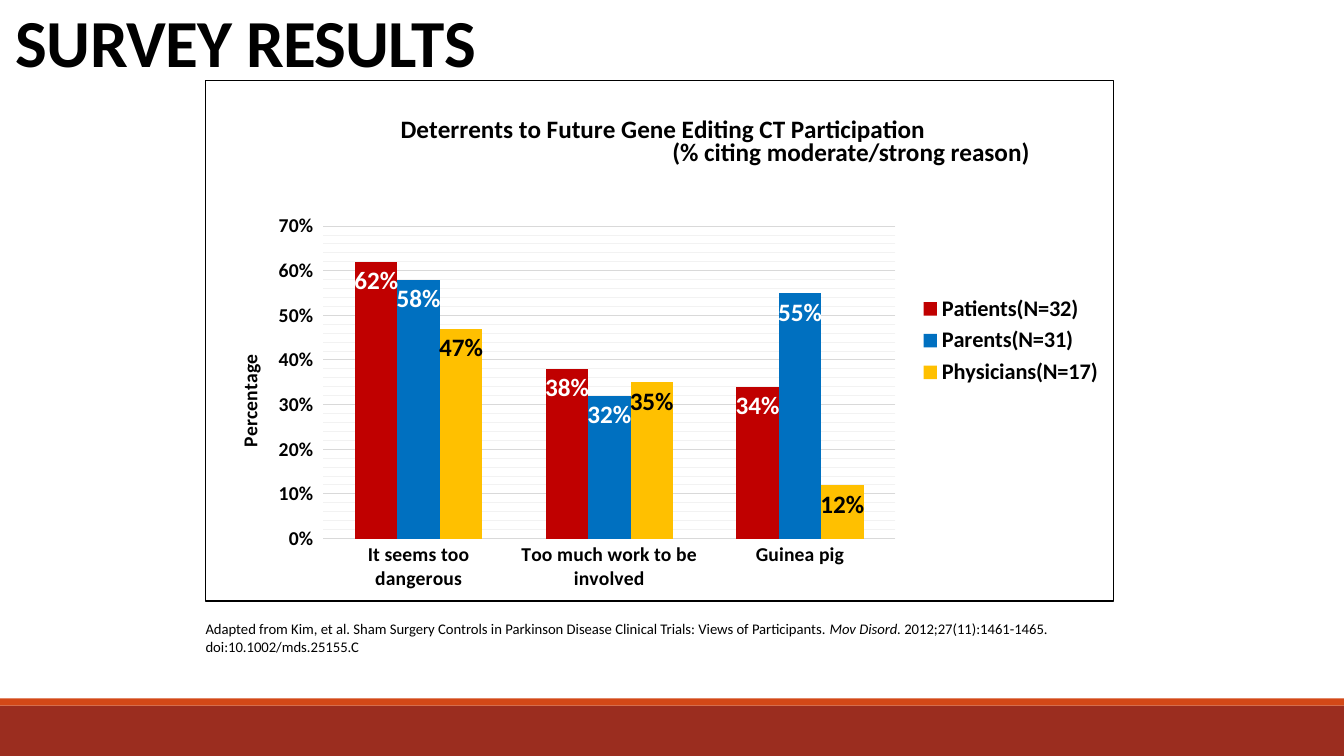
from dataclasses import dataclass

from lxml import etree
from pptx import Presentation, util as u
from pptx.chart.data import CategoryChartData
from pptx.dml.color import RGBColor
from pptx.enum import chart as kinds, shapes, text
from pptx.oxml import parse_xml
from pptx.oxml.ns import nsdecls, qn

BLACK = RGBColor(0, 0, 0)
WHITE = RGBColor(255, 255, 255)
BRICK = RGBColor(0x9B, 0x2D, 0x1F)
ORANGE = RGBColor(0xD3, 0x48, 0x17)
RED = RGBColor(0xC0, 0, 0)
BLUE = RGBColor(0, 0x70, 0xC0)
GOLD = RGBColor(0xFF, 0xC0, 0)
GRAY = RGBColor(0xD9, 0xD9, 0xD9)
PALE = RGBColor(0xF2, 0xF2, 0xF2)
FACE = "Calibri"


@dataclass
class Band:
    top: float
    height: float
    color: RGBColor


@dataclass
class Group:
    name: str
    values: tuple[float, ...]
    color: RGBColor
    label: RGBColor


BANDS = [Band(7, 0.5, BRICK), Band(6.93, 0.07, ORANGE)]
GROUPS = [
    Group("Patients(N=32)", (0.62, 0.38, 0.34), RED, WHITE),
    Group("Parents(N=31)", (0.58, 0.32, 0.55), BLUE, WHITE),
    Group("Physicians(N=17)", (0.47, 0.35, 0.12), GOLD, BLACK),
]
REASONS = ["It seems too dangerous", "Too much work to be involved", "Guinea pig"]


def style(font, size: float, bold: bool = True, color: RGBColor = BLACK,
          italic: bool = False) -> None:
    font.name = FACE
    font.size = u.Pt(size)
    font.bold = bold
    font.italic = italic
    font.color.rgb = color


def write(slide, box: tuple[float, ...], *parts: str, size: float, bold: bool = False,
          slant: str = "", line: float = 1, space: int = 0) -> None:
    frame = slide.shapes.add_textbox(*map(u.Inches, box)).text_frame
    frame.word_wrap = True
    frame.vertical_anchor = text.MSO_ANCHOR.TOP
    para = frame.paragraphs[0]
    para.line_spacing = line
    for part in parts:
        run = para.add_run()
        run.text = part
        style(run.font, size, bold, italic=part == slant)
        if space:
            run.font._element.set("spc", str(space))


def draw_band(slide, band: Band) -> None:
    shape = slide.shapes.add_shape(
        shapes.MSO_SHAPE.RECTANGLE, 0, u.Inches(band.top), u.Inches(13.33), u.Inches(band.height))
    shape.shadow.inherit = False
    shape.fill.solid()
    shape.fill.fore_color.rgb = band.color
    shape.line.fill.background()


def place(node, index: int, **sides: float) -> None:
    for old in node.findall(qn("c:layout")):
        node.remove(old)
    layout = etree.Element(qn("c:layout"))
    manual = etree.SubElement(layout, qn("c:manualLayout"))
    if "w" in sides:
        etree.SubElement(manual, qn("c:layoutTarget"), val="inner")
    for side in ("x", "y"):
        etree.SubElement(manual, qn(f"c:{side}Mode"), val="edge")
    for side, value in sides.items():
        etree.SubElement(manual, qn(f"c:{side}"), val=str(value))
    node.insert(index, layout)


def name_part(title, words: str, size: float, x: float, y: float) -> None:
    title.text_frame.text = words
    style(title.text_frame.paragraphs[0].runs[0].font, size)
    place(title._element, 1, x=x, y=y)


def draw_line(line, color: RGBColor) -> None:
    line.color.rgb = color
    line.width = u.Pt(0.75)


def outline(color: RGBColor, width: float, fill: str = ""):
    return parse_xml(
        f'<c:spPr {nsdecls("c", "a")}>{fill}<a:ln w="{u.Pt(width)}"><a:solidFill>'
        f'<a:srgbClr val="{color}"/></a:solidFill></a:ln></c:spPr>')


def draw_chart(slide) -> None:
    data = CategoryChartData(number_format="0%")
    data.categories = REASONS
    for group in GROUPS:
        data.add_series(group.name, group.values)
    box = map(u.Inches, (2.03, 0.79, 9.02, 5.18))
    chart = slide.shapes.add_chart(kinds.XL_CHART_TYPE.COLUMN_CLUSTERED, *box, data).chart
    style(chart.font, 10, False)
    chart.has_title = True
    name_part(chart.chart_title, "Deterrents to Future Gene Editing CT Participation",
              18, 0.21, 0.05)

    plot = chart.plots[0]
    plot.gap_width = 150
    plot.overlap = 0
    plot.vary_by_categories = False
    for group, bars in zip(GROUPS, plot.series):
        bars.format.fill.solid()
        bars.format.fill.fore_color.rgb = group.color
        labels = bars.data_labels
        labels.show_value = True
        labels.position = kinds.XL_LABEL_POSITION.INSIDE_END
        labels.number_format = "0%"
        labels.number_format_is_linked = False
        style(labels.font, 18, color=group.label)

    reason, share = chart.category_axis, chart.value_axis
    for axis in (reason, share):
        style(axis.tick_labels.font, 14)
    reason.major_tick_mark = kinds.XL_TICK_MARK.NONE
    draw_line(reason.format.line, GRAY)
    share.minimum_scale, share.maximum_scale = 0, 0.7
    share.major_unit, share.minor_unit = 0.1, 0.02
    share.has_major_gridlines = share.has_minor_gridlines = True
    draw_line(share.major_gridlines.format.line, GRAY)
    share.format.line.fill.background()
    share.tick_labels.number_format = "0%"
    share.tick_labels.number_format_is_linked = False
    name_part(share.axis_title, "Percentage", 14, 0.03, 0.52)
    share.axis_title.text_frame._txBody.bodyPr.set("rot", "-5400000")

    chart.has_legend = True
    chart.legend.position = kinds.XL_LEGEND_POSITION.RIGHT
    chart.legend.include_in_layout = False
    style(chart.legend.font, 16)

    space = chart._chartSpace
    place(space.find(f".//{qn('c:plotArea')}"), 0, x=0.13, y=0.28, w=0.63, h=0.6)
    space.find(f".//{qn('c:minorGridlines')}").append(outline(PALE, 0.75))
    fill = f'<a:solidFill><a:srgbClr val="{WHITE}"/></a:solidFill>'
    space.find(qn("c:chart")).addnext(outline(BLACK, 1, fill))


deck = Presentation()
deck.slide_width, deck.slide_height = u.Inches(13.33), u.Inches(7.5)
slide = deck.slides.add_slide(deck.slide_layouts[6])
for band in BANDS:
    draw_band(slide, band)
write(slide, (0.06, 0.08, 12.93, 1.59), "SURVEY RESULTS",
      size=48, bold=True, line=0.85, space=-50)
write(slide, (1.94, 6.1, 8.58, 0.45),
      "Adapted from Kim, et al. Sham Surgery Controls in Parkinson Disease Clinical Trials: "
      "Views of Participants. ", "Mov Disord. ", "2012;27(11):1461-1465. doi:10.1002/mds.25155.C",
      size=10.5, slant="Mov Disord. ")
draw_chart(slide)
write(slide, (6.57, 1.3, 3.9, 0.4), "(% citing moderate/strong reason)", size=18, bold=True)
deck.save("out.pptx")
